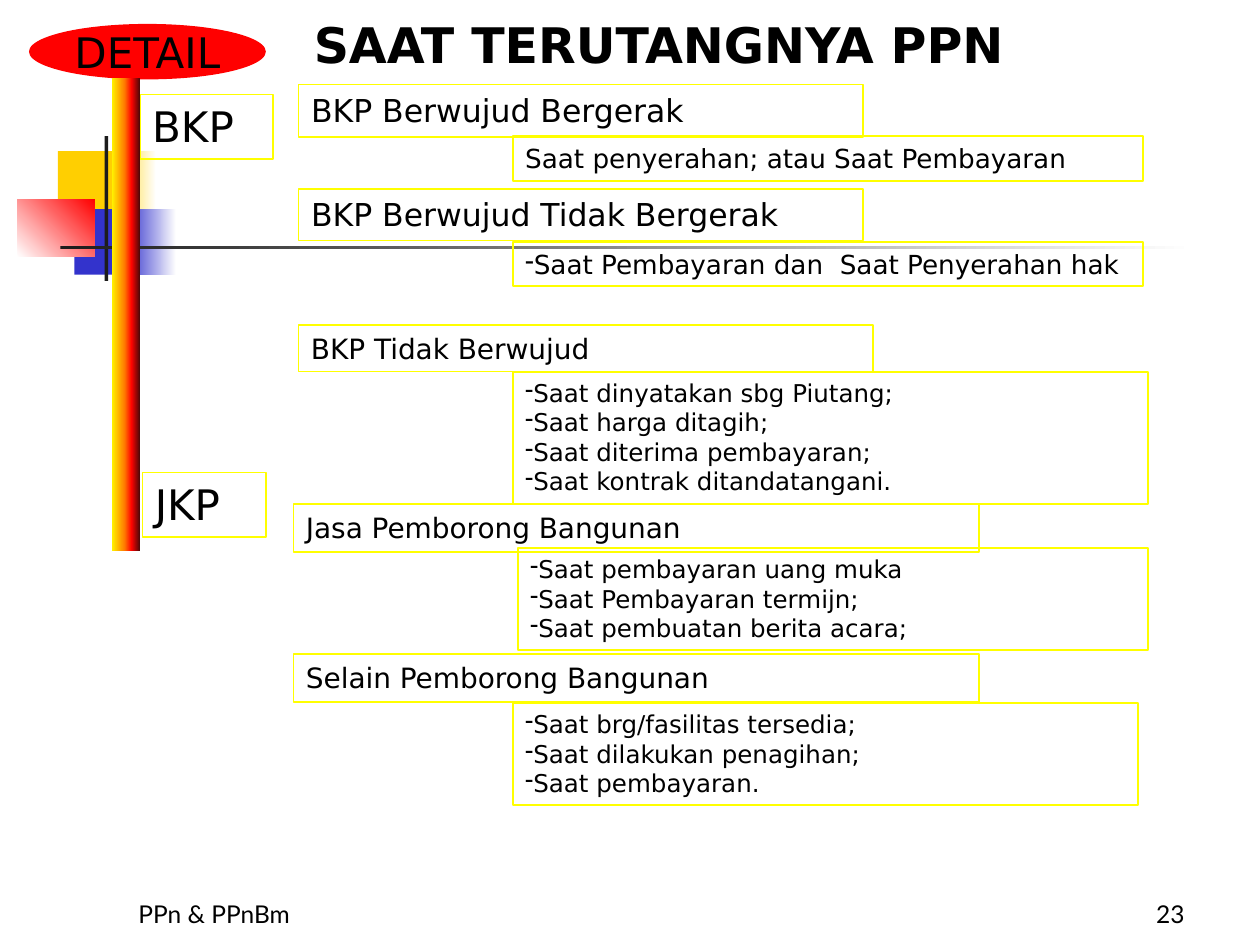
from dataclasses import dataclass
from lxml.etree import SubElement
from pptx import Presentation
from pptx.dml.color import RGBColor
from pptx.enum.shapes import MSO_SHAPE as Preset
from pptx.enum.text import MSO_ANCHOR as Anchor, MSO_AUTO_SIZE as AutoSize, PP_ALIGN as Align
from pptx.oxml.ns import qn
from pptx.util import Inches, Pt


@dataclass(frozen=True)
class Theme:
    ink: str = "000000"
    frame: str = "FFFF00"
    badge: str = "FF0000"
    gold: str = "FFCF01"
    blue: str = "3333CC"
    dark: str = "1C1C1C"
    white: str = "FFFFFF"
    font: str = "DejaVu Sans"
    footer_font: str = "Lato"
    title: int = 28
    group: int = 24
    heading: int = 18
    subheading: int = 16
    detail: int = 15
    small: int = 14


T = Theme()
FIRE = [(0, "FFF200"), (45, "FF7A00"), (70, "FF0300"), (100, "4D0808")]

DECOR = [
    ((0.46, 1.2, 0.48, 0.52), [(0, T.gold)], 0),
    ((0.88, 1.2, 0.36, 0.52), [(0, T.gold), (100, T.white)], 0),
    ((0.59, 1.66, 0.46, 0.52), [(0, T.blue)], 0),
    ((1, 1.66, 0.4, 0.52), [(0, T.blue), (100, T.white)], 0),
    ((0.14, 1.58, 0.61, 0.46), [(0, T.white), (100, T.badge)], 45),
    ((0.83, 1.08, 0.03, 1.15), [(0, T.dark)], 0),
    ((0.48, 1.95, 9, 0.03), [(0, T.dark), (100, T.white)], 0),
]
GROUPS = [("BKP", (1.11, 0.75, 1.06, 0.51)), ("JKP", (1.13, 3.75, 0.98, 0.51))]
HEADINGS = [
    ("BKP Berwujud Bergerak", T.heading, (2.37, 0.67, 4.48, 0.42)),
    ("BKP Berwujud Tidak Bergerak", T.heading, (2.37, 1.5, 4.48, 0.41)),
    ("BKP Tidak Berwujud", T.subheading, (2.37, 2.58, 4.56, 0.37)),
    ("Jasa Pemborong Bangunan", T.subheading, (2.33, 4, 5.44, 0.38)),
    ("Selain Pemborong Bangunan", T.subheading, (2.33, 5.19, 5.44, 0.38)),
]
DETAILS = [
    (["Saat penyerahan; atau Saat Pembayaran"], T.detail, None, (4.07, 1.08, 5, 0.36)),
    (["Saat Pembayaran dan  Saat Penyerahan hak"], T.detail, "-", (4.07, 1.92, 5, 0.35)),
    (["Saat dinyatakan sbg Piutang;", "Saat harga ditagih;",
      "Saat diterima pembayaran;", "Saat kontrak ditandatangani."],
     T.small, "-", (4.07, 2.95, 5.04, 1.05)),
    (["Saat brg/fasilitas tersedia;", "Saat dilakukan penagihan;", "Saat pembayaran."],
     T.small, "-", (4.07, 5.58, 4.96, 0.81)),
    (["Saat pembayaran uang muka", "Saat Pembayaran termijn;", "Saat pembuatan berita acara;"],
     T.small, "-", (4.11, 4.35, 5, 0.81)),
]
FOOTERS = [("PPn & PPnBm", Align.LEFT, 1), ("23", Align.RIGHT, 7.42)]


def paint(shape, stops, angle):
    if len(stops) == 1:
        shape.fill.solid()
        shape.fill.fore_color.rgb = RGBColor.from_string(stops[0][1])
        return
    shape.fill.gradient()
    shape.fill.gradient_angle = angle
    ramp = shape._element.spPr.find(qn("a:gradFill")).find(qn("a:gsLst"))
    for old in list(ramp):
        ramp.remove(old)
    for share, color in stops:
        stop = SubElement(ramp, qn("a:gs"), pos=str(share * 1000))
        SubElement(stop, qn("a:srgbClr"), val=color)


def add_block(slide, at, stops=None, angle=0, preset=Preset.RECTANGLE):
    shape = slide.shapes.add_shape(preset, *map(Inches, at))
    shape.shadow.inherit = False
    if stops:
        paint(shape, stops, angle)
        shape.line.fill.background()
    else:
        shape.fill.background()
        shape.line.color.rgb = RGBColor.from_string(T.frame)
        shape.line.width = Pt(1)
    return shape


def write(shape, lines, size, align=Align.LEFT, bullet=None, font=T.font, bold=False, **frame):
    for key, value in {"word_wrap": True, "vertical_anchor": Anchor.TOP, **frame}.items():
        setattr(shape.text_frame, key, value)
    shape.text_frame.text = "\n".join(lines)
    for paragraph in shape.text_frame.paragraphs:
        paragraph.alignment = align
        if bullet:
            props = paragraph._p.get_or_add_pPr()
            props.set("marL", "0")
            props.set("indent", "0")
            SubElement(props, qn("a:buChar"), char=bullet)
        for key, value in {"name": font, "size": Pt(size), "bold": bold}.items():
            setattr(paragraph.font, key, value)
        paragraph.font.color.rgb = RGBColor.from_string(T.ink)


def add_framed(slide, lines, size, at, bullet=None):
    write(add_block(slide, at), lines, size, bullet=bullet,
          auto_size=AutoSize.SHAPE_TO_FIT_TEXT)


def main():
    deck = Presentation()
    deck.slide_width, deck.slide_height = Inches(10), Inches(7.5)
    slide = deck.slides.add_slide(deck.slide_layouts[5])

    for at, stops, angle in DECOR:
        add_block(slide, at, stops, angle)
    for text, align, left in FOOTERS:
        footer = slide.shapes.add_textbox(*map(Inches, (left, 6.92, 2.08, 0.5)))
        write(footer, [text], T.small, align, font=T.footer_font, vertical_anchor=Anchor.BOTTOM)

    for text, at in GROUPS:
        add_framed(slide, [text], T.group, at)
    for text, size, at in HEADINGS:
        add_framed(slide, [text], size, at)
    for lines, size, bullet, at in DETAILS:
        add_framed(slide, lines, size, at, bullet)

    badge = add_block(slide, (0.23, 0.19, 1.88, 0.44), [(0, T.badge)], preset=Preset.OVAL)
    write(badge, ["DETAIL"], T.group, Align.CENTER, word_wrap=False, vertical_anchor=Anchor.MIDDLE)

    title = slide.shapes.title
    title.left, title.top, title.width, title.height = map(Inches, (2.39, 0.19, 7.06, 0.44))
    write(title, ["SAAT TERUTANGNYA PPN"], T.title, bold=True,
          vertical_anchor=Anchor.BOTTOM, auto_size=AutoSize.NONE)

    add_block(slide, (0.89, 0.62, 0.22, 3.75), FIRE)
    deck.save("out.pptx")


if __name__ == "__main__":
    main()
